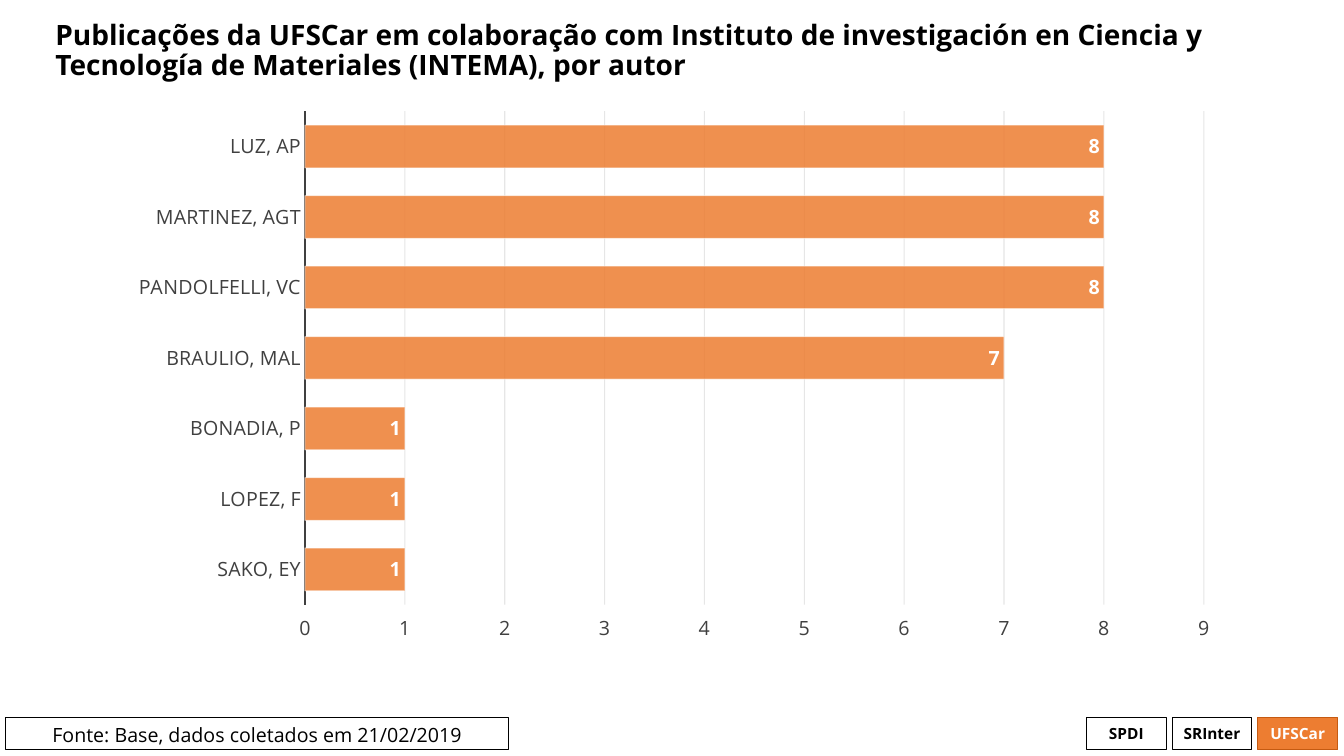
import pptx
import pptx.chart.data
import pptx.dml.color
import pptx.enum.chart
import pptx.enum.shapes
import pptx.enum.text
import pptx.oxml
import pptx.oxml.ns
import pptx.util

Cm = pptx.util.Cm
Pt = pptx.util.Pt
RGBColor = pptx.dml.color.RGBColor
ALIGN = pptx.enum.text.PP_ALIGN
ANCHOR = pptx.enum.text.MSO_ANCHOR

# Content
TITLE = ("Publicações da UFSCar em colaboração com Instituto de investigación en "
         "Ciencia y Tecnología de Materiales (INTEMA), por autor")
PUBLICATIONS = {
    "LUZ, AP": 8,
    "MARTINEZ, AGT": 8,
    "PANDOLFELLI, VC": 8,
    "BRAULIO, MAL": 7,
    "BONADIA, P": 1,
    "LOPEZ, F": 1,
    "SAKO, EY": 1,
}
SOURCE = "Fonte: Base, dados coletados em 21/02/2019"
TABS = ["SPDI", "SRInter", "UFSCar"]
ACTIVE_TAB = "UFSCar"

# Style
FONT = "Open Sans"
BLACK = RGBColor(0x00, 0x00, 0x00)
WHITE = RGBColor(0xFF, 0xFF, 0xFF)
ORANGE = RGBColor(0xED, 0x7D, 0x31)
DARK_ORANGE = RGBColor(0xC5, 0x5A, 0x11)
GREY = RGBColor(0x40, 0x40, 0x40)
GRID = RGBColor(0x0D, 0x0D, 0x0D)
THIN = Pt(0.75)

# Footer geometry
FOOTER_TOP, FOOTER_HEIGHT = Cm(18.08), Cm(0.82)
TAB_LEFT, TAB_WIDTH, TAB_STEP = Cm(27.38), Cm(2.01), Cm(2.16)

# Plot area as shares of the chart frame
PLOT = {"x": 0.17, "y": 0.02, "w": 0.81, "h": 0.89}


def set_font(font, size, color, bold=False):
    font.name, font.size, font.bold = FONT, Pt(size), bold
    font.color.rgb = color


def write_text(shape, text, size=14, color=BLACK, bold=False,
               align=ALIGN.CENTER, anchor=ANCHOR.MIDDLE, spacing=None):
    frame = shape.text_frame
    frame.word_wrap = True
    frame.vertical_anchor = anchor
    para = frame.paragraphs[0]
    para.alignment, para.line_spacing = align, spacing
    span = para.add_run()
    span.text = text
    set_font(span.font, size, color, bold)


def add_footer_box(page, left, width, text, fill=None, line=BLACK, **text_format):
    box = page.shapes.add_shape(pptx.enum.shapes.MSO_SHAPE.RECTANGLE,
                                left, FOOTER_TOP, width, FOOTER_HEIGHT)
    box.shadow.inherit = False
    if fill is None:
        box.fill.background()
    else:
        box.fill.solid()
        box.fill.fore_color.rgb = fill
    box.line.color.rgb, box.line.width = line, THIN
    write_text(box, text, **text_format)


def set_opacity(color_element, percent):
    alpha = pptx.oxml.parse_xml(
        f'<a:alpha {pptx.oxml.ns.nsdecls("a")} val="{percent * 1000}"/>')
    color_element.append(alpha)


def add_author_chart(page):
    data = pptx.chart.data.CategoryChartData()
    data.categories = list(PUBLICATIONS)
    data.add_series("Publicações", list(PUBLICATIONS.values()))
    chart = page.shapes.add_chart(pptx.enum.chart.XL_CHART_TYPE.BAR_CLUSTERED,
                                  Cm(2.92), Cm(2.51), Cm(27.99), Cm(14), data).chart
    chart.has_legend = chart.has_title = False
    set_font(chart.font, 14, BLACK)

    # Axes
    authors, counts = chart.category_axis, chart.value_axis
    for axis in (authors, counts):
        axis.major_tick_mark = axis.minor_tick_mark = pptx.enum.chart.XL_TICK_MARK.NONE
        set_font(axis.tick_labels.font, 14, GREY)
    authors.reverse_order = True
    authors.has_major_gridlines = False
    authors.format.line.color.rgb, authors.format.line.width = GREY, Pt(1.5)
    counts.minimum_scale, counts.maximum_scale, counts.major_unit = 0, 9, 1
    counts.tick_label_position = pptx.enum.chart.XL_TICK_LABEL_POSITION.HIGH
    counts.format.line.fill.background()
    grid_line = counts.major_gridlines.format.line
    grid_line.color.rgb, grid_line.width = GRID, THIN

    # Bars and labels
    plot = chart.plots[0]
    plot.gap_width, plot.vary_by_categories = 65, False
    bars = plot.series[0]
    bars.format.fill.solid()
    bars.format.fill.fore_color.rgb = ORANGE
    bars.format.line.color.rgb, bars.format.line.width = WHITE, THIN
    labels = bars.data_labels
    labels.show_value = True
    labels.position = pptx.enum.chart.XL_LABEL_POSITION.INSIDE_END
    set_font(labels.font, 14, WHITE, bold=True)

    # Transparency of bar fill, bar outline and grid
    colors = (chart.element.xpath(".//c:ser/c:spPr//a:srgbClr")
              + chart.element.xpath(".//c:majorGridlines//a:srgbClr"))
    for color, percent in zip(colors, (85, 50, 10)):
        set_opacity(color, percent)

    # Fixed plot area
    plot_area = chart.element.xpath(".//c:plotArea")[0]
    for layout in plot_area.xpath("./c:layout"):
        plot_area.remove(layout)
    sides = "".join(f'<c:{side} val="{share}"/>' for side, share in PLOT.items())
    plot_area.insert(0, pptx.oxml.parse_xml(
        f'<c:layout {pptx.oxml.ns.nsdecls("c")}><c:manualLayout>'
        '<c:layoutTarget val="inner"/><c:xMode val="edge"/><c:yMode val="edge"/>'
        f'{sides}</c:manualLayout></c:layout>'))

    # White chart background and border
    chart.element.xpath("./c:chart")[0].addnext(pptx.oxml.parse_xml(
        f'<c:spPr {pptx.oxml.ns.nsdecls("c", "a")}>'
        f'<a:solidFill><a:srgbClr val="{WHITE}"/></a:solidFill>'
        f'<a:ln w="{THIN}"><a:solidFill><a:srgbClr val="{WHITE}"/></a:solidFill></a:ln>'
        '</c:spPr>'))


def main():
    deck = pptx.Presentation()
    deck.slide_width, deck.slide_height = Cm(33.87), Cm(19.05)
    page = deck.slides.add_slide(deck.slide_layouts[5])

    # Footer
    for index, name in enumerate(TABS):
        active = name == ACTIVE_TAB
        add_footer_box(page, TAB_LEFT + index * TAB_STEP, TAB_WIDTH, name,
                       fill=ORANGE if active else None,
                       line=DARK_ORANGE if active else BLACK,
                       color=WHITE if active else BLACK, size=11, bold=True)
    add_footer_box(page, Cm(0.15), Cm(12.67), SOURCE, anchor=ANCHOR.TOP)

    # Title
    title = page.shapes.title
    title.left, title.top, title.width, title.height = Cm(1.14), Cm(0.15), Cm(31.52), Cm(2.31)
    write_text(title, TITLE, size=20, bold=True, align=ALIGN.LEFT, spacing=0.9)

    add_author_chart(page)
    deck.save("out.pptx")


if __name__ == "__main__":
    main()
